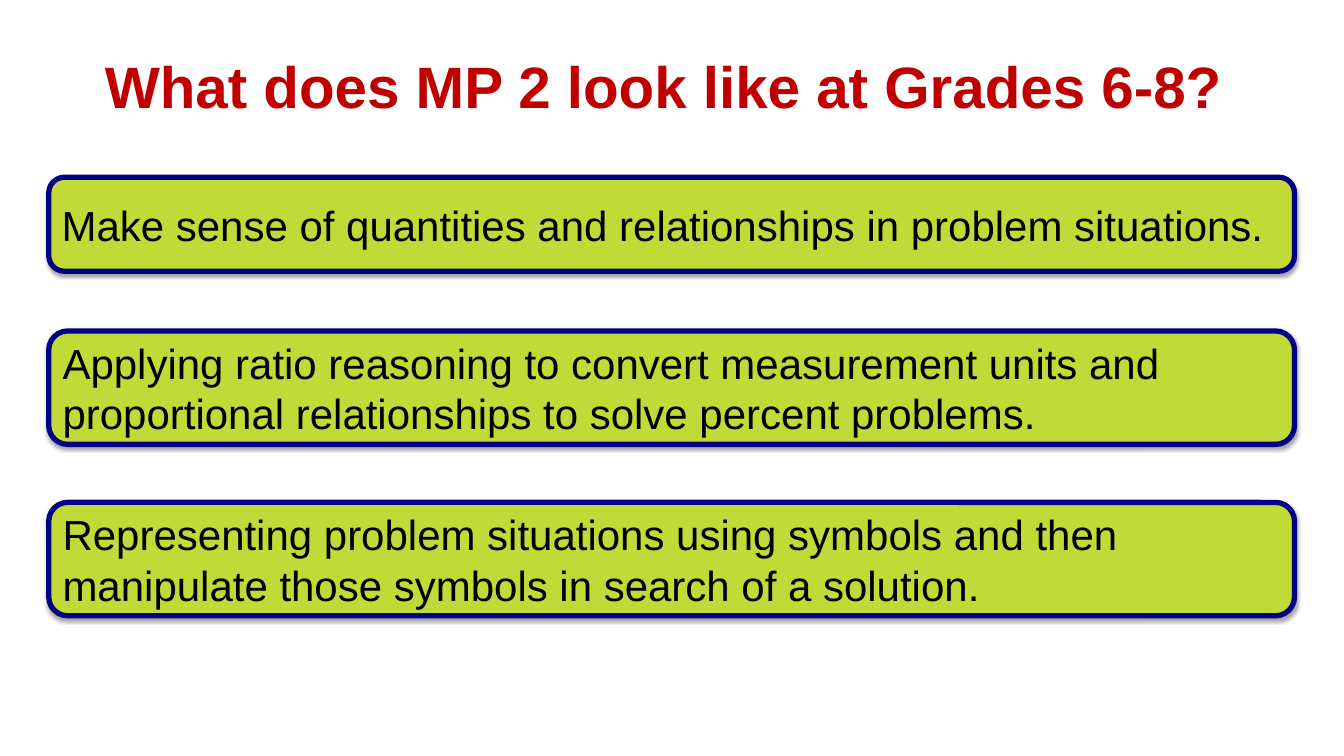
from lxml import etree
from pptx import Presentation
from pptx.dml.color import RGBColor
from pptx.enum.shapes import MSO_SHAPE
from pptx.enum.text import MSO_ANCHOR, PP_ALIGN
from pptx.oxml.ns import qn
from pptx.util import Pt

ROUNDED = MSO_SHAPE.ROUNDED_RECTANGLE
MIDDLE = MSO_ANCHOR.MIDDLE
LEFT, CENTER = PP_ALIGN.LEFT, PP_ALIGN.CENTER

TITLE = "What does MP 2 look like at Grades 6-8? "
PRACTICES = [
    (151.9, 80.6, "Make sense of quantities and relationships in problem situations."),
    (283.7, 97.2, "Applying ratio reasoning to convert measurement units and "
                  "proportional relationships to solve percent problems."),
    (430.6, 97.2, "Representing problem situations using symbols and then "
                  "manipulate those symbols in search of a solution."),
]


def rgb(color):
    """Return the colour for a hex string."""
    return RGBColor.from_string(color)


def write(tf, text, size, color, align, bold=False):
    """Fill a text frame with one formatted paragraph."""
    tf.word_wrap = True
    tf.text = text
    p = tf.paragraphs[0]
    p.alignment = align
    font = p.runs[0].font
    font.name, font.size, font.bold = "Arial", Pt(size), bold
    font.color.rgb = rgb(color)


def add_soft_shadow(sp):
    """Give a shape a soft shadow that falls straight down."""
    sp.shadow.inherit = False
    effects = sp._element.spPr.find(qn("a:effectLst"))
    shadow = etree.SubElement(effects, qn("a:outerShdw"), blurRad=str(Pt(3.1)),
                              dist=str(Pt(1.8)), dir="5400000", rotWithShape="0")
    black = etree.SubElement(shadow, qn("a:srgbClr"), val="000000")
    etree.SubElement(black, qn("a:alpha"), val="35000")


def add_title(s, left, top, width, height):
    """Place the slide heading in the given box."""
    tf = s.shapes.add_textbox(Pt(left), Pt(top), Pt(width), Pt(height)).text_frame
    tf.margin_left = tf.margin_top = tf.margin_right = tf.margin_bottom = 0
    write(tf, TITLE, 50, "C00000", CENTER, bold=True)


def add_practice(s, left, top, width, height, text):
    """Place one green rounded statement in the given box."""
    sp = s.shapes.add_shape(ROUNDED, Pt(left), Pt(top), Pt(width), Pt(height))
    sp.fill.solid()
    sp.fill.fore_color.rgb = rgb("C0DB37")
    sp.line.color.rgb = rgb("040284")
    sp.line.width = Pt(4.5)
    add_soft_shadow(sp)
    sp.text_frame.vertical_anchor = MIDDLE
    write(sp.text_frame, text, 36, "000000", LEFT)


def main():
    """Build and save the slide."""
    prs = Presentation()
    prs.slide_width, prs.slide_height = Pt(1152), Pt(648)
    s = prs.slides.add_slide(prs.slide_layouts[6])
    add_title(s, 57.6, 43.2, 1036.8, 60.5)
    for top, height, text in PRACTICES:
        add_practice(s, 41.8, top, 1067.8, height, text)
    prs.save("out.pptx")


if __name__ == "__main__":
    main()
